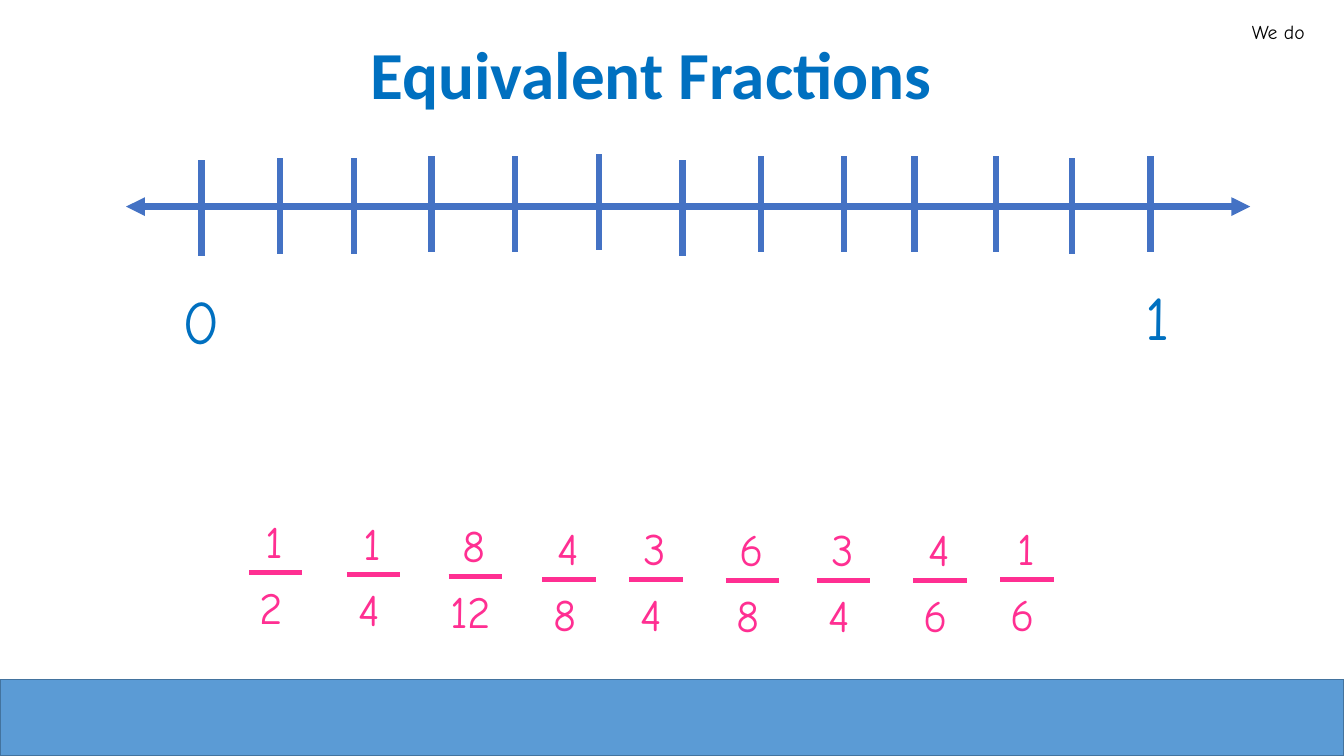
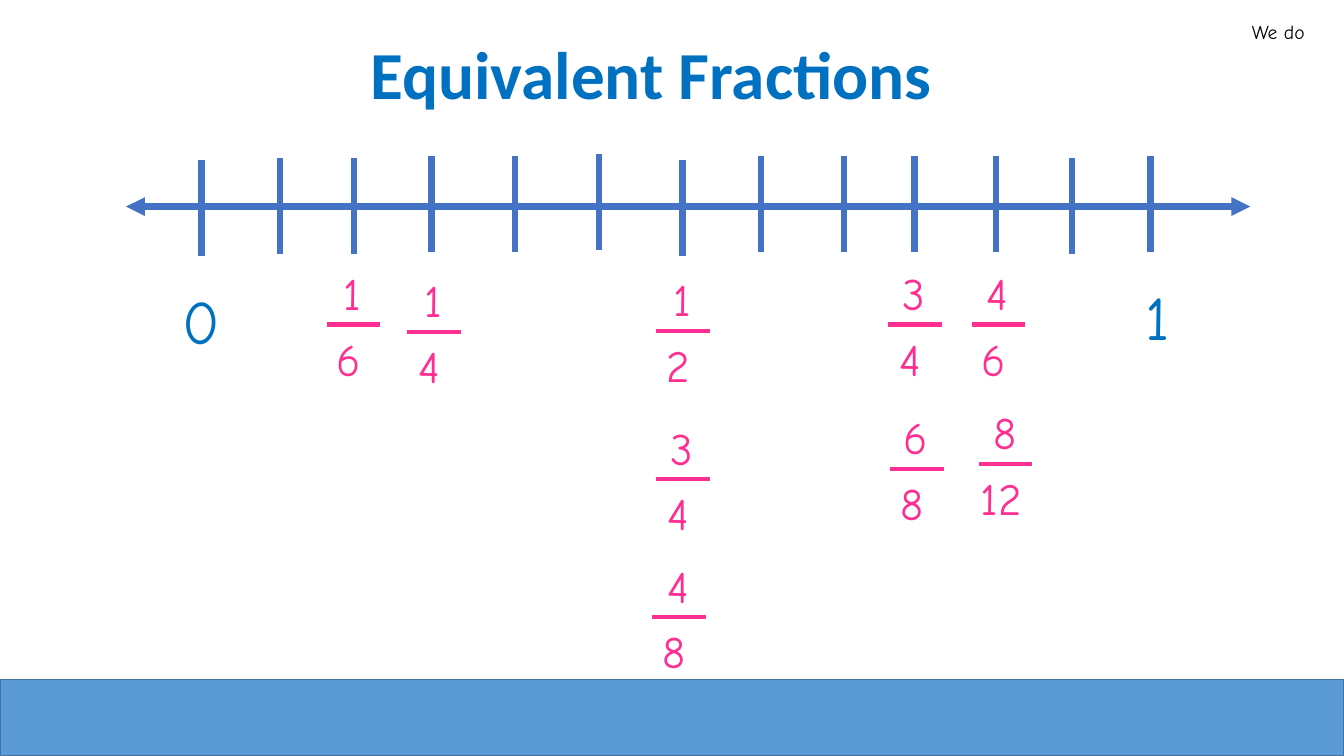
from typing import NamedTuple

from lxml import etree
from pptx import Presentation
from pptx import util as u
from pptx.dml.color import RGBColor
from pptx.enum import shapes, text
from pptx.oxml import ns

COLORS = {
    "title": "0070C0",
    "axis": "4472C4",
    "fraction": "FF2F92",
    "band": "5B9BD5",
    "band_edge": "43739E",
    "label": "000000",
}
HAND_FONT = "Comic Neue"
TITLE_FONT = "Calibri"
WIDTH, HEIGHT = 13.33, 7.5
BAND_TOP = 6.74
AXIS_Y, AXIS_LEFT, AXIS_RIGHT = 2.05, 1.25, 12.4
TICK_LENGTH = 0.95
BAR_LENGTH = 0.53


class Box(NamedTuple):
    left: float
    top: float
    width: float
    height: float

    def lengths(self) -> list[u.Length]:
        return [u.Inches(v) for v in self]


class Label(NamedTuple):
    words: str
    box: Box
    size: float
    color: str
    align: text.PP_ALIGN = text.PP_ALIGN.CENTER


class Tick(NamedTuple):
    x: float
    top: float


class Fraction(NamedTuple):
    top: str
    bottom: str
    x: float
    y: float


TITLE_BOX = Box(1.06, 0.27, 10.8, 0.91)
LABELS = [
    Label("We do", Box(11.86, 0.15, 1.18, 0.34), 14, "label", text.PP_ALIGN.RIGHT),
    Label("0", Box(1.54, 2.76, 0.91, 0.96), 44, "title"),
    Label("1", Box(11, 2.72, 0.96, 0.8), 44, "title"),
]
TICKS = [
    Tick(2, 1.59), Tick(2.78, 1.57), Tick(3.51, 1.57), Tick(4.28, 1.55),
    Tick(5.11, 1.55), Tick(5.94, 1.53), Tick(6.77, 1.59), Tick(7.55, 1.55),
    Tick(8.37, 1.55), Tick(9.07, 1.55), Tick(9.88, 1.55), Tick(10.63, 1.57),
    Tick(11.41, 1.55),
]
SLIDES = [
    [
        Fraction("1", "2", 2.47, 5.68), Fraction("1", "4", 3.44, 5.7),
        Fraction("8", "12", 4.45, 5.72), Fraction("4", "8", 5.38, 5.75),
        Fraction("3", "4", 6.24, 5.75), Fraction("6", "8", 7.2, 5.76),
        Fraction("3", "4", 8.1, 5.76), Fraction("4", "6", 9.06, 5.76),
        Fraction("1", "6", 9.92, 5.75),
    ],
    [
        Fraction("1", "6", 3.24, 3.22), Fraction("1", "4", 4.04, 3.29),
        Fraction("1", "2", 6.51, 3.28), Fraction("3", "4", 6.51, 4.75),
        Fraction("4", "8", 6.47, 6.12), Fraction("3", "4", 8.81, 3.22),
        Fraction("6", "8", 8.83, 4.65), Fraction("4", "6", 9.64, 3.22),
        Fraction("8", "12", 9.71, 4.6),
    ],
]


def rgb(name: str) -> RGBColor:
    return RGBColor.from_string(COLORS[name])


def add_run(p, words: str, font: str, size: float, color: str, bold: bool = False) -> None:
    r = p.add_run()
    r.text = words
    r.font.name = font
    r.font.size = u.Pt(size)
    r.font.bold = bold
    r.font.color.rgb = rgb(color)


def add_label(tree, label: Label) -> None:
    tf = tree.add_textbox(*label.box.lengths()).text_frame
    tf.word_wrap = True
    p = tf.paragraphs[0]
    p.alignment = label.align
    p.space_before = u.Pt(label.size * 0.2)
    add_run(p, label.words, HAND_FONT, label.size, label.color)


def add_line(tree, x1: float, y1: float, x2: float, y2: float,
             color: str, width: float, arrows: bool = False) -> None:
    ends = [u.Inches(v) for v in (x1, y1, x2, y2)]
    line = tree.add_connector(shapes.MSO_CONNECTOR.STRAIGHT, *ends)
    line.line.color.rgb = rgb(color)
    line.line.width = u.Pt(width)
    if arrows:
        ln = line.line._get_or_add_ln()
        for tag in ("a:headEnd", "a:tailEnd"):
            etree.SubElement(ln, ns.qn(tag), type="triangle")
    etree.SubElement(line._element.spPr, ns.qn("a:effectLst"))


def add_title(s) -> None:
    sp = s.shapes.title
    sp.left, sp.top, sp.width, sp.height = TITLE_BOX.lengths()
    tf = sp.text_frame
    tf.auto_size = text.MSO_AUTO_SIZE.NONE
    tf.vertical_anchor = text.MSO_ANCHOR.MIDDLE
    p = tf.paragraphs[0]
    p.alignment = text.PP_ALIGN.CENTER
    add_run(p, "Equivalent Fractions", TITLE_FONT, 48, "title", bold=True)


def add_band(s) -> None:
    box = Box(0, BAND_TOP, WIDTH, HEIGHT - BAND_TOP)
    sp = s.shapes.add_shape(shapes.MSO_SHAPE.RECTANGLE, *box.lengths())
    sp.shadow.inherit = False
    sp.fill.solid()
    sp.fill.fore_color.rgb = rgb("band")
    sp.line.color.rgb = rgb("band_edge")
    sp.line.width = u.Pt(1)


def add_number_line(s) -> None:
    add_line(s.shapes, AXIS_LEFT, AXIS_Y, AXIS_RIGHT, AXIS_Y, "axis", 4.5, arrows=True)
    for tick in TICKS:
        add_line(s.shapes, tick.x, tick.top, tick.x, tick.top + TICK_LENGTH, "axis", 4.5)


def add_fraction(s, f: Fraction) -> None:
    tree = s.shapes.add_group_shape().shapes
    add_label(tree, Label(f.top, Box(f.x - 0.2, f.y - 0.63, 0.91, 0.96), 32, "fraction"))
    add_line(tree, f.x, f.y, f.x + BAR_LENGTH, f.y, "fraction", 3)
    add_label(tree, Label(f.bottom, Box(f.x - 0.17, f.y + 0.02, 0.78, 1.09), 32, "fraction"))


def add_slide(prs, fractions: list[Fraction]) -> None:
    s = prs.slides.add_slide(prs.slide_layouts[5])
    add_title(s)
    add_band(s)
    add_number_line(s)
    for label in LABELS:
        add_label(s.shapes, label)
    for fraction in fractions:
        add_fraction(s, fraction)


def main() -> None:
    prs = Presentation()
    prs.slide_width = u.Inches(WIDTH)
    prs.slide_height = u.Inches(HEIGHT)
    for fractions in SLIDES:
        add_slide(prs, fractions)
    prs.save("out.pptx")


if __name__ == "__main__":
    main()
